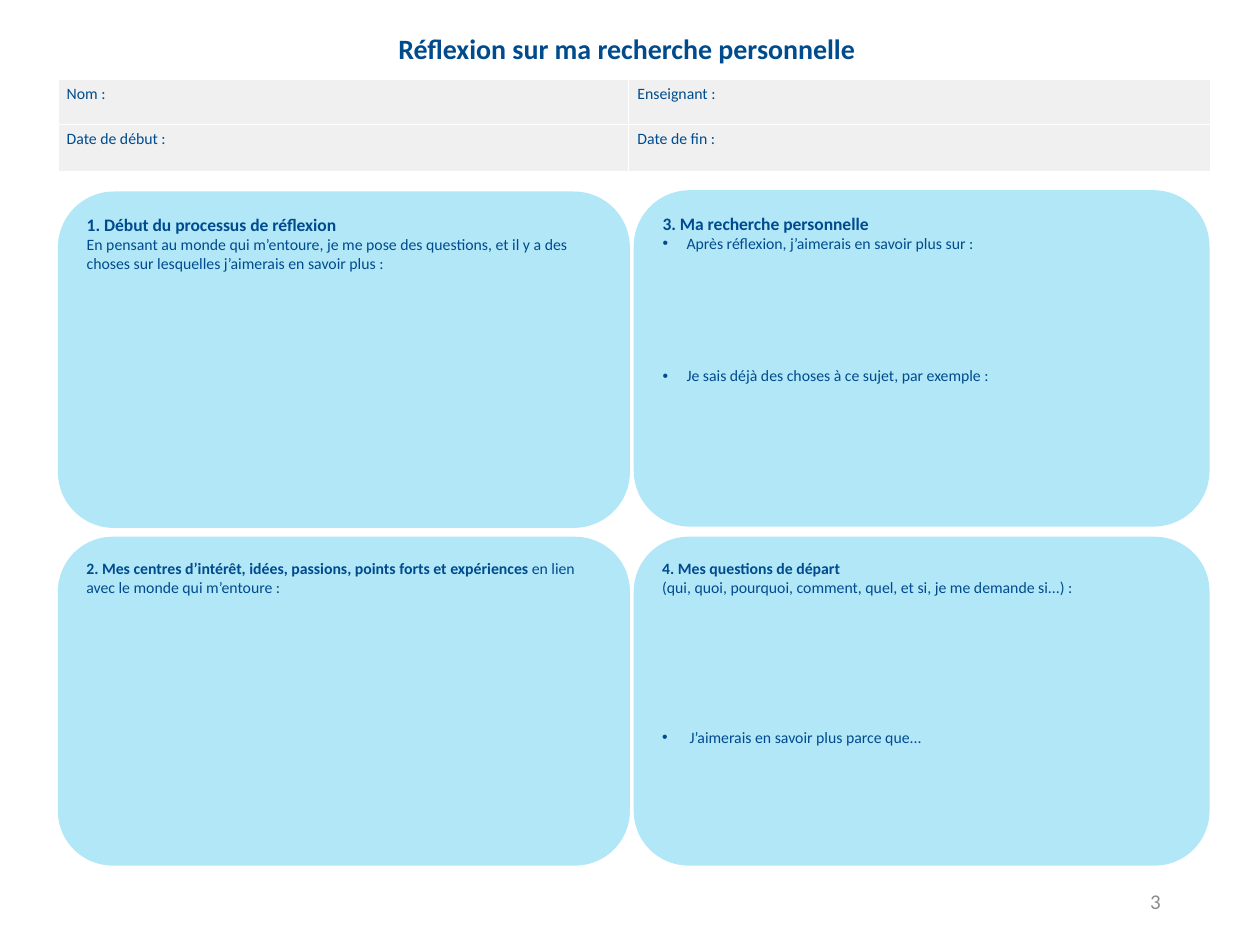
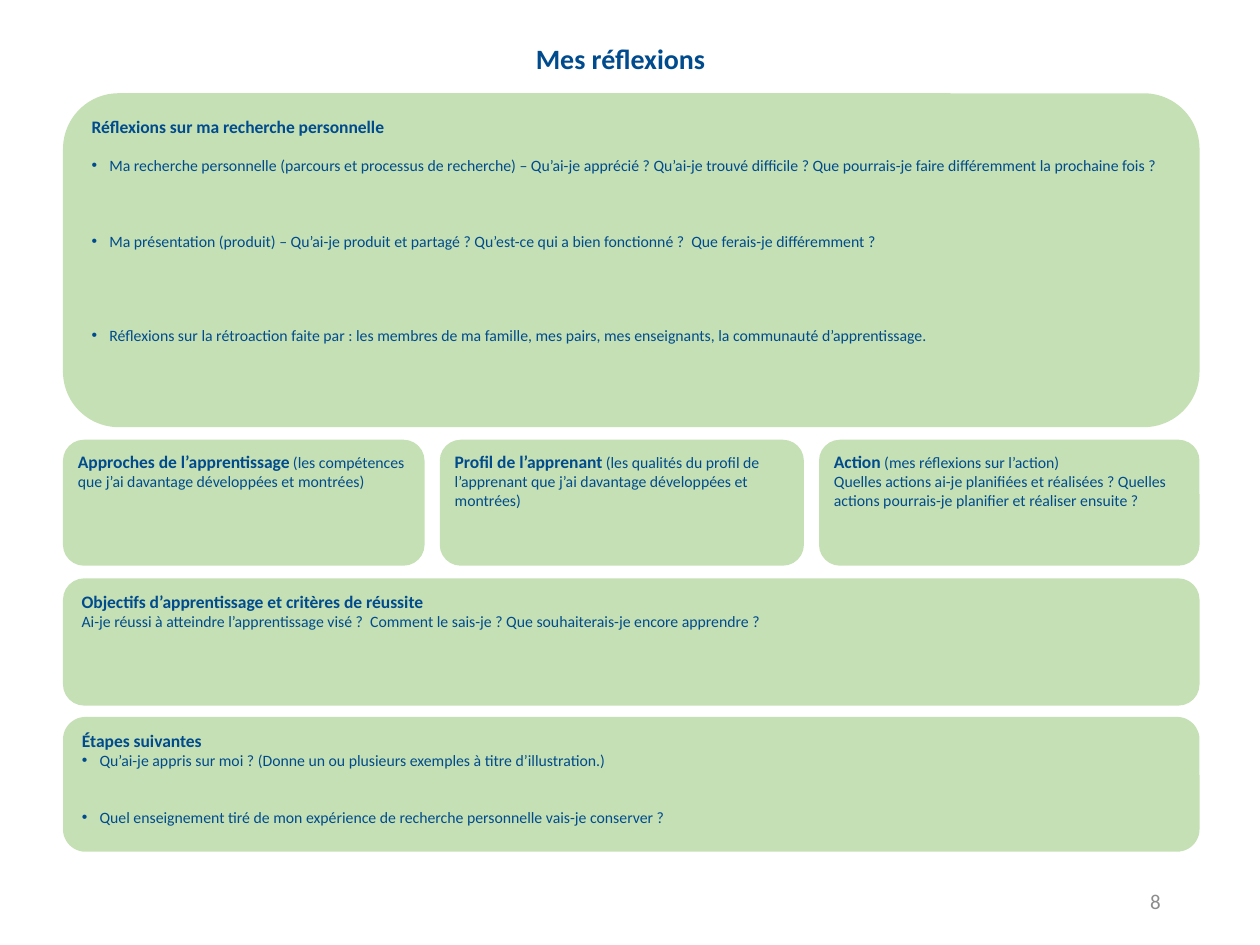
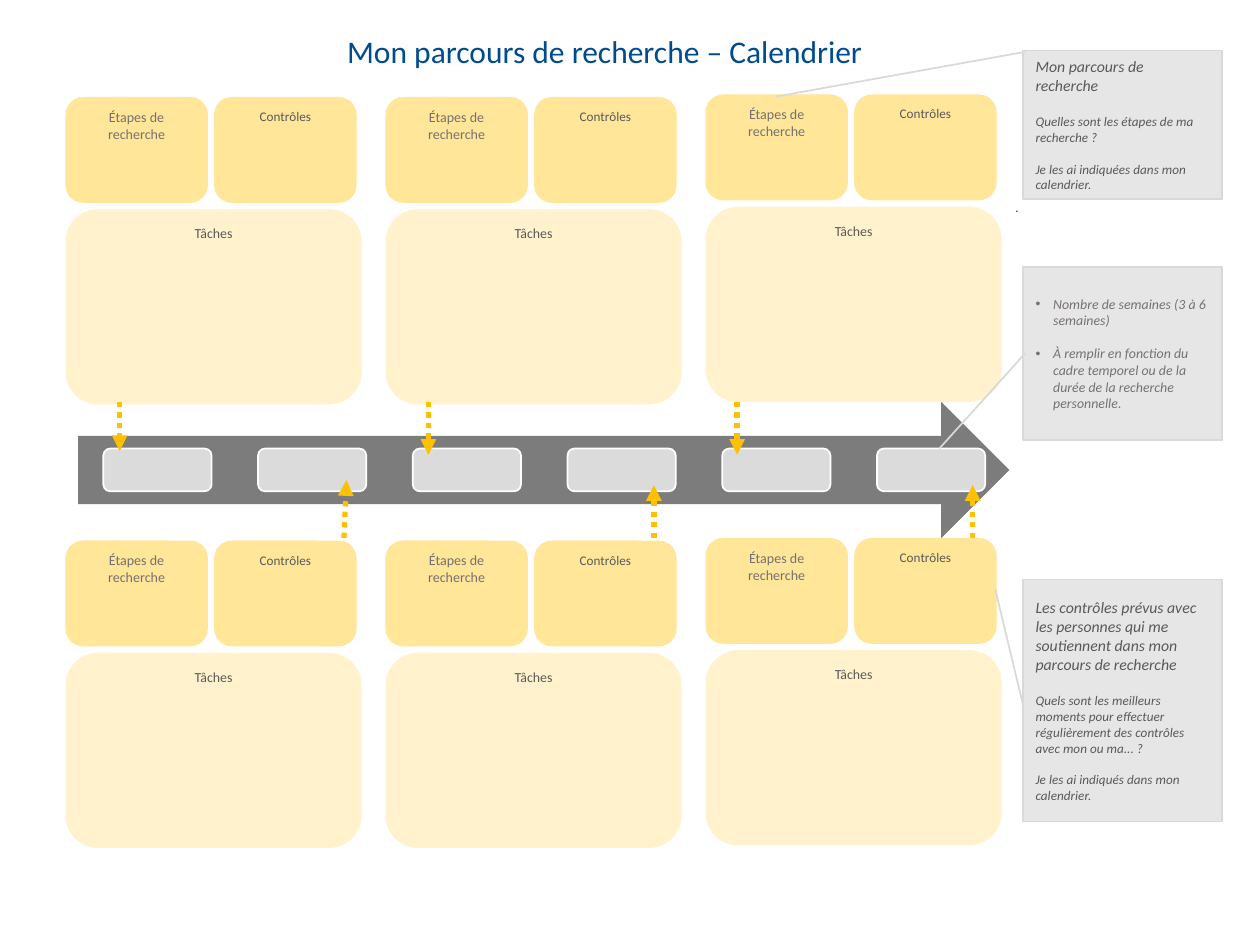
from dataclasses import dataclass, field

from lxml import etree
from pptx import Presentation
from pptx import util as u
from pptx.dml.color import RGBColor
from pptx.enum import dml, shapes, text
from pptx.oxml import ns

KIND = shapes.MSO_SHAPE
LEFT, MID, RIGHT, FULL = (text.PP_ALIGN.LEFT, text.PP_ALIGN.CENTER,
                          text.PP_ALIGN.RIGHT, text.PP_ALIGN.JUSTIFY)
TOP, CORE = text.MSO_ANCHOR.TOP, text.MSO_ANCHOR.MIDDLE
WIDE, SLIM = (1, 0.5), (0.7, 0.4)


@dataclass
class Theme:
    """Colours, type styles and line pitch of the deck."""
    hue: dict = field(default_factory=lambda: {
        "navy": "004B8D", "sky": "B2E7F8", "leaf": "C5E0B4", "pale": "F0F0F0",
        "sun": "FFE699", "sand": "FFF2CC", "gold": "FFC000", "iron": "7C7C7C",
        "slot": "DBDBDB", "note": "E7E6E6", "rim": "D9D9D9", "white": "FFFFFF",
        "page": "8C8C8C", "dark": "595959", "dim": "767171", "black": "000000"})
    type: dict = field(default_factory=lambda: {
        "title": ("navy", {"size": 16, "bold": True}),
        "light": ("navy", {"size": 18, "bold": False}),
        "head": ("navy", {"size": 10, "bold": True}),
        "lead": ("navy", {"size": 9, "bold": True}),
        "body": ("navy", {"size": 9}),
        "page": ("page", {"size": 12}),
        "step": ("dim", {"size": 8}),
        "check": ("dark", {"size": 7.5}),
        "task": ("dark", {"size": 7.9}),
        "topic": ("dark", {"size": 9, "italic": True}),
        "hint": ("dark", {"size": 7.5, "italic": True}),
        "tip": ("dim", {"size": 7.9, "italic": True}),
        "dot": ("black", {"size": 6.8, "name": "Arial"})})
    pitch: float = 1.2

    def rgb(self, name):
        """Return the named colour."""
        return RGBColor.from_string(self.hue[name])


@dataclass
class Para:
    """One paragraph: runs, blank lines before it, bullet indent, alignment."""
    runs: list
    gap: float = 0
    dot: float = 0
    al: int = LEFT


def line(words, style="body", **opts):
    """Return a paragraph with a single run."""
    return Para([(words, style)], **opts)


class Deck:
    """Holds the theme, the file and the current slide on a 100 by 75 grid."""

    def __init__(self, theme):
        self.theme = theme
        self.prs = Presentation()
        self.prs.slide_width, self.prs.slide_height = u.Inches(10), u.Inches(7.5)
        self.unit = self.prs.slide_width / 100

    def size(self, *cells):
        """Turn grid cells into lengths."""
        return [u.Emu(round(c * self.unit)) for c in cells]

    def begin(self, title, at, style="title", page=None):
        """Start a slide with its title and page number."""
        self.slide = self.prs.slides.add_slide(self.prs.slide_layouts[5])
        name = self.slide.shapes.title
        name.left, name.top, name.width, name.height = self.size(*at)
        self.fill(name, [line(title, style, al=MID)], CORE)
        if page:
            self.label(line(page, "page", al=RIGHT), (70.6, 69.5, 22.5, 4), CORE)

    def fill(self, box, paras, anchor=TOP, inset=WIDE):
        """Fill a shape or table cell with paragraphs."""
        frame = box.text_frame
        side, edge = self.size(*inset)
        host = frame if hasattr(box, "shape_type") else box
        spot = {"margin_left": side, "margin_right": side, "margin_top": edge,
                "margin_bottom": edge, "vertical_anchor": anchor}
        for key, val in spot.items():
            setattr(host, key, val)
        frame.word_wrap = True
        for i, para in enumerate(paras):
            out = frame.add_paragraph() if i else frame.paragraphs[0]
            out.alignment = para.al
            for words, style in para.runs:
                run = out.add_run()
                run.text = words
                hue, form = self.theme.type[style]
                run.font.color.rgb = self.theme.rgb(hue)
                for key, val in ({"name": "Calibri", "bold": False} | form).items():
                    setattr(run.font, key, u.Pt(val) if key == "size" else val)
            if para.gap:
                size = self.theme.type[para.runs[0][1]][1]["size"]
                out.space_before = u.Pt(round(para.gap * size * self.theme.pitch, 1))
            if para.dot:
                self.bullet(out, para.dot)

    def bullet(self, para, dent):
        """Give a paragraph a hanging bullet."""
        props = para._p.get_or_add_pPr()
        width = self.size(dent)[0]
        props.set("marL", str(width))
        props.set("indent", str(-width))
        etree.SubElement(props, ns.qn("a:buFont")).set("typeface", "Arial")
        etree.SubElement(props, ns.qn("a:buChar")).set("char", "•")

    def label(self, para, at, anchor=TOP):
        """Add a plain text box."""
        self.fill(self.slide.shapes.add_textbox(*self.size(*at)), [para], anchor)

    def shape(self, kind, at, fill, rim=None, paras=(), anchor=TOP, inset=WIDE, adj=()):
        """Add a filled preset shape with text."""
        box = self.slide.shapes.add_shape(kind, *self.size(*at))
        box.shadow.inherit = False
        box.fill.solid()
        box.fill.fore_color.rgb = self.theme.rgb(fill)
        if rim:
            box.line.color.rgb = self.theme.rgb(rim)
            box.line.width = u.Pt(1)
        else:
            box.line.fill.background()
        for i, val in enumerate(adj):
            box.adjustments[i] = val
        if paras:
            self.fill(box, paras, anchor, inset)

    def card(self, at, fill, *paras, inset=WIDE):
        """Add a rounded card."""
        self.shape(KIND.ROUNDED_RECTANGLE, at, fill, paras=paras, inset=inset)

    def note(self, top, high, adj, *paras):
        """Add a callout in the right margin."""
        self.shape(KIND.LINE_CALLOUT_1, (81.2, top, 15.8, high), "note", "rim",
                   paras, CORE, adj=adj)

    def arrow(self, *ends):
        """Add a dotted arrow."""
        link = self.slide.shapes.add_connector(
            shapes.MSO_CONNECTOR.STRAIGHT, *self.size(*ends))
        link.line.color.rgb = self.theme.rgb("gold")
        link.line.width = u.Pt(3)
        link.line.dash_style = dml.MSO_LINE.ROUND_DOT
        props = link._element.spPr
        etree.SubElement(props.find(ns.qn("a:ln")), ns.qn("a:tailEnd")).set("type", "triangle")
        etree.SubElement(props, ns.qn("a:effectLst"))

    def table(self, at, cols, rows, cells):
        """Add a plain table of labels."""
        grid = self.slide.shapes.add_table(len(rows), len(cols), *self.size(*at)).table
        grid.first_row = grid.horz_banding = False
        for col, wide in zip(grid.columns, self.size(*cols)):
            col.width = wide
        for row, high, words in zip(grid.rows, self.size(*rows), cells):
            row.height = high
            for cell, word in zip(row.cells, words):
                cell.fill.solid()
                cell.fill.fore_color.rgb = self.theme.rgb("pale")
                self.fill(cell, [line(word)], inset=SLIM)


def start(deck):
    """Build the page on planning the research."""
    deck.begin("Réflexion sur ma recherche personnelle", (0, 2, 99.5, 3.7), page="3")
    deck.table((4.6, 6.3, 91.5, 7.3), (45.3, 46.2), (3.6, 3.7),
               (("Nom :", "Enseignant :"), ("Date de début :", "Date de fin :")))
    left, right, low, wide, broad = 4.6, 50.3, 42.6, 45.4, 45.7
    deck.card((left, 15.2, wide, 26.7), "sky",
              line("1. Début du processus de réflexion", "head"),
              line("En pensant au monde qui m’entoure, je me pose des questions, et il y a "
                   "des choses sur lesquelles j’aimerais en savoir plus :"))
    deck.card((left, low, wide, 26.1), "sky", Para([
        ("2. Mes centres d’intérêt, idées, passions, points forts et expériences ", "lead"),
        ("en lien avec le monde qui m’entoure :", "body")]))
    deck.card((right, 15.1, broad, 26.7), "sky",
              line("3. Ma recherche personnelle", "head"),
              line("Après réflexion, j’aimerais en savoir plus sur :", dot=1.9),
              line("Je sais déjà des choses à ce sujet, par exemple :", gap=6, dot=1.9))
    deck.card((right, low, broad, 26.1), "sky",
              line("4. Mes questions de départ", "lead"),
              line("(qui, quoi, pourquoi, comment, quel, et si, je me demande si...) :"),
              line(" J’aimerais en savoir plus parce que...", gap=6.9, dot=1.9))


def review(deck):
    """Build the page of closing reflections."""
    deck.begin("Mes réflexions", (0, 2.8, 98.5, 3.7), page="8")
    left, wide, dent = 5, 90.2, 1.4
    deck.card((left, 7.4, wide, 26.5), "leaf",
              line("Réflexions sur ma recherche personnelle", "head", al=FULL),
              line("Ma recherche personnelle (parcours et processus de recherche) – Qu’ai-je "
                   "apprécié ? Qu’ai-je trouvé difficile ? Que pourrais-je faire différemment "
                   "la prochaine fois ?", gap=1, dot=dent, al=FULL),
              line("Ma présentation (produit) – Qu’ai-je produit et partagé ? Qu’est-ce qui a "
                   "bien fonctionné ?  Que ferais-je différemment ?", gap=3, dot=dent, al=FULL),
              line("Réflexions sur la rétroaction faite par : les membres de ma famille, mes "
                   "pairs, mes enseignants, la communauté d’apprentissage.",
                   gap=4, dot=dent, al=FULL))
    trio = (
        (left, 28.7, "Approches de l’apprentissage",
         " (les compétences que j’ai davantage développées et montrées)", ()),
        (34.9, 28.9, "Profil de l’apprenant",
         " (les qualités du profil de l’apprenant que j’ai davantage développées et montrées)",
         ()),
        (65, 30.2, "Action", " (mes réflexions sur l’action)",
         (line("Quelles actions ai-je planifiées et réalisées ? Quelles actions pourrais-je "
               "planifier et réaliser ensuite ?"),)))
    for x, span, head, body, more in trio:
        deck.card((x, 34.9, span, 10), "leaf",
                  Para([(head, "head"), (body, "body")]), *more, inset=SLIM)
    deck.card((left, 45.9, wide, 10.1), "leaf",
              line("Objectifs d’apprentissage et critères de réussite", "head"),
              line("Ai-je réussi à atteindre l’apprentissage visé ?  Comment le sais-je ? "
                   "Que souhaiterais-je encore apprendre ?"))
    deck.card((left, 56.9, wide, 10.7), "leaf",
              line("Étapes suivantes", "head"),
              line("Qu’ai-je appris sur moi ? (Donne un ou plusieurs exemples à titre "
                   "d’illustration.)", dot=dent),
              line("Quel enseignement tiré de mon expérience de recherche personnelle vais-je "
                   "conserver ?", gap=2, dot=dent))


def plan(deck):
    """Build the calendar page."""
    deck.begin("Mon parcours de recherche – Calendrier", (0, 1.2, 96, 5.7), "light")
    deck.label(line(".", "dot"), (79.6, 15.4, 18.8, 2.1))
    deck.shape(KIND.RIGHT_ARROW, (6.2, 31.9, 73.9, 10.8), "iron")
    for week in range(6):
        deck.shape(KIND.ROUNDED_RECTANGLE, (8.2 + 12.28 * week, 35.6, 8.6, 3.4),
                   "slot", "white")
    for x, tip, end in ((27.3, 27.5, 38.1), (51.9, 51.9, 38.5), (77.2, 77.2, 38.5)):
        deck.arrow(x, 42.7, tip, end)
    for top in (7.7, 42.9):
        for col, lift in enumerate((0, 0, 0.2)):
            x, y = 5.2 + 25.4 * col, top - lift
            deck.card((x, y, 11.3, 8.4), "sun", line("Étapes de recherche", "step", al=MID))
            deck.card((x + 11.8, y, 11.3, 8.4), "sun", line("Contrôles", "check", al=MID))
            deck.card((x, y + 8.9, 23.5, 15.5), "sand", line("Tâches", "task", al=MID))
    for col, end in enumerate((35.8, 36.1, 36.1)):
        x = 9.5 + 24.5 * col
        deck.arrow(x, 31.9, x, end)
    deck.note(4, 11.8, (0.01, 0.01, 0.31, -1.24),
              line("Mon parcours de recherche", "topic"),
              line("Quelles sont les étapes de ma recherche ?", "hint", gap=1.2),
              line("Je les ai indiquées dans mon calendrier.", "hint", gap=1))
    deck.note(21.2, 13.7, (0.5, 0.01, 1.05, -0.42),
              line("Nombre de semaines (3 à 6 semaines)", "tip", dot=1.4),
              line("À remplir en fonction du cadre temporel ou de la durée de la recherche "
                   "personnelle.", "tip", gap=1, dot=1.4))
    deck.note(46, 19.2, (0.52, 0, 0.04, -0.14),
              line("Les contrôles prévus avec les personnes qui me soutiennent dans mon "
                   "parcours de recherche", "topic"),
              line("Quels sont les meilleurs moments pour effectuer régulièrement des "
                   "contrôles avec mon ou ma... ?", "hint", gap=1.2),
              line("Je les ai indiqués dans mon calendrier.", "hint", gap=1))


def main():
    """Build and save the deck."""
    deck = Deck(Theme())
    for build in (start, review, plan):
        build(deck)
    deck.prs.save("out.pptx")


if __name__ == "__main__":
    main()
